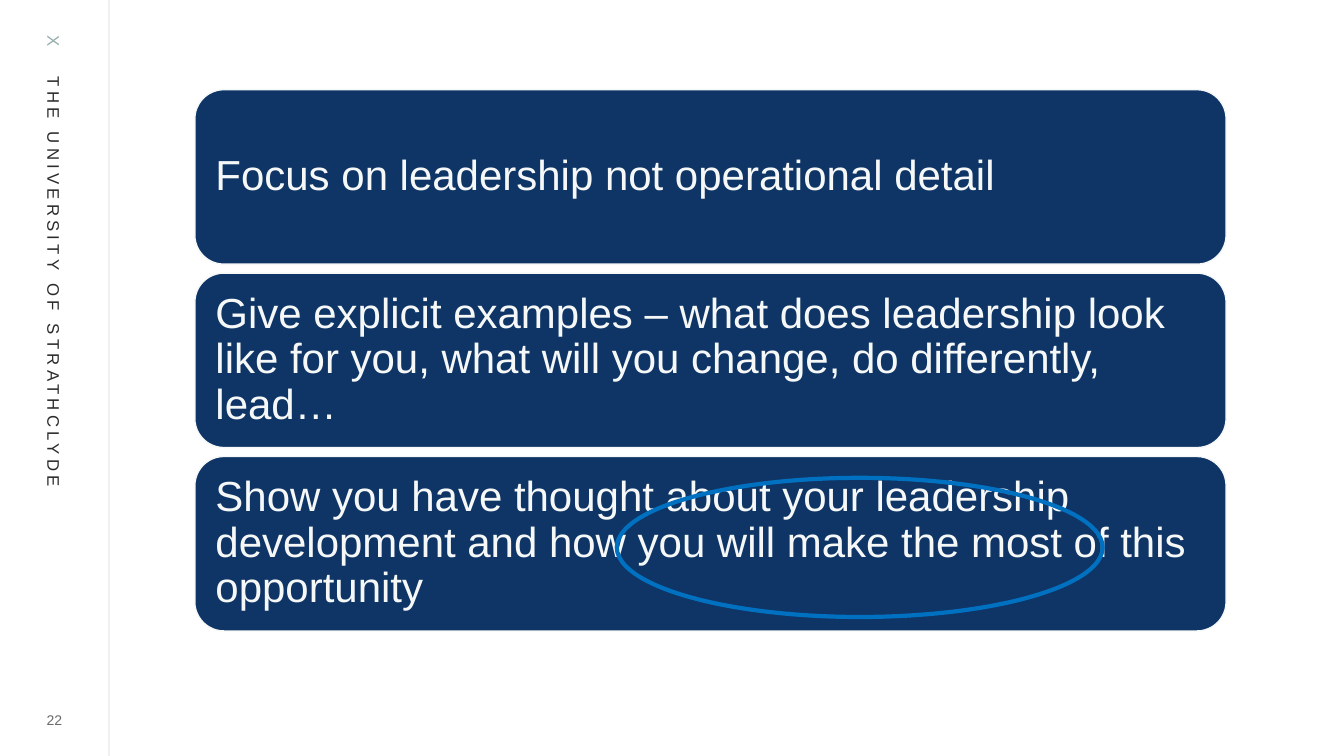
from lxml.etree import SubElement
from pptx import Presentation
from pptx.dml.color import RGBColor
from pptx.enum.shapes import MSO_CONNECTOR, MSO_SHAPE
from pptx.enum.text import MSO_ANCHOR, PP_ALIGN
from pptx.oxml.ns import qn
from pptx.util import Pt

TIPS = [
    "Focus on leadership not operational detail",
    "Give explicit examples – what does leadership look like for you, "
    "what will you change, do differently, lead…",
    "Show you have thought about your leadership development and how you "
    "will make the most of this opportunity",
]
MARK = "X"
UNIVERSITY = "THE UNIVERSITY OF STRATHCLYDE"
PAGE_NUMBER = "22"

FONT = "Arial"
NAVY = RGBColor(0x0E, 0x35, 0x66)
PALE = RGBColor(0xF6, 0xF8, 0xF8)
BLUE = RGBColor(0x00, 0x70, 0xC0)
INK = RGBColor(0x2B, 0x2B, 0x2B)
SAGE = RGBColor(0x95, 0xAC, 0xAC)

PAGE_WIDTH, PAGE_HEIGHT = 960, 540
MARGIN_X = 77.8
CARD_LEFT, CARD_TOP, CARD_WIDTH, CARD_HEIGHT = 139.2, 64.1, 736.6, 124.6
CARD_PITCH = 131
CARD_INSET = 8.64


def set_opacity(fill, percent):
    color = fill._xPr.find(qn("a:solidFill"))[0]
    SubElement(color, qn("a:alpha")).set("val", str(percent * 1000))


def set_insets(frame, size):
    frame.margin_left = frame.margin_right = Pt(size)
    frame.margin_top = frame.margin_bottom = Pt(size)


def add_margin_line(page):
    line = page.shapes.add_connector(
        MSO_CONNECTOR.STRAIGHT, Pt(MARGIN_X), Pt(0), Pt(MARGIN_X), Pt(PAGE_HEIGHT))
    line.line.width = Pt(0.5)
    line.line.color.rgb = INK
    set_opacity(line.line.fill, 20)
    SubElement(line._element.spPr, qn("a:effectLst"))


def add_side_title(page):
    box = page.shapes.add_textbox(Pt(-165.6), Pt(211.7), Pt(408.2), Pt(21.6))
    box.rotation = 90
    box.text_frame.word_wrap = True
    para = box.text_frame.paragraphs[0]
    tabs = SubElement(para._p.get_or_add_pPr(), qn("a:tabLst"))
    SubElement(tabs, qn("a:tab"), pos=str(Pt(29.3)), algn="l")
    para.font.name = FONT
    para.font.size = Pt(12)
    for text, color in [(MARK, SAGE), ("\t" + UNIVERSITY, INK)]:
        span = para.add_run()
        span.text = text
        span.font.color.rgb = color
        span._r.get_or_add_rPr().set("spc", "300")


def add_page_number(page):
    box = page.shapes.add_textbox(Pt(18.7), Pt(505.4), Pt(40.3), Pt(18))
    frame = box.text_frame
    frame.word_wrap = True
    frame.vertical_anchor = MSO_ANCHOR.MIDDLE
    set_insets(frame, 0)
    para = frame.paragraphs[0]
    para.text = PAGE_NUMBER
    para.alignment = PP_ALIGN.CENTER
    para.font.name = FONT
    para.font.size = Pt(10)
    para.font.color.rgb = INK
    set_opacity(para.font.fill, 70)


def add_card(page, row, text):
    card = page.shapes.add_shape(
        MSO_SHAPE.ROUNDED_RECTANGLE, Pt(CARD_LEFT), Pt(CARD_TOP + row * CARD_PITCH),
        Pt(CARD_WIDTH), Pt(CARD_HEIGHT))
    card.shadow.inherit = False
    card.fill.solid()
    card.fill.fore_color.rgb = NAVY
    card.line.color.rgb = PALE
    card.line.width = Pt(1)
    frame = card.text_frame
    frame.word_wrap = True
    frame.vertical_anchor = MSO_ANCHOR.MIDDLE
    set_insets(frame, CARD_INSET)
    para = frame.paragraphs[0]
    para.text = text
    para.alignment = PP_ALIGN.LEFT
    para.line_spacing = 0.9
    para.font.name = FONT
    para.font.size = Pt(30)
    para.font.color.rgb = PALE


def add_highlight(page):
    ring = page.shapes.add_shape(
        MSO_SHAPE.OVAL, Pt(440.6), Pt(341.3), Pt(347), Pt(99.4))
    ring.shadow.inherit = False
    ring.fill.background()
    ring.line.color.rgb = BLUE
    ring.line.width = Pt(3)


def main():
    deck = Presentation()
    deck.slide_width, deck.slide_height = Pt(PAGE_WIDTH), Pt(PAGE_HEIGHT)
    page = deck.slides.add_slide(deck.slide_layouts[6])
    add_margin_line(page)
    add_side_title(page)
    add_page_number(page)
    for row, text in enumerate(TIPS):
        add_card(page, row, text)
    add_highlight(page)
    deck.save("out.pptx")


if __name__ == "__main__":
    main()
